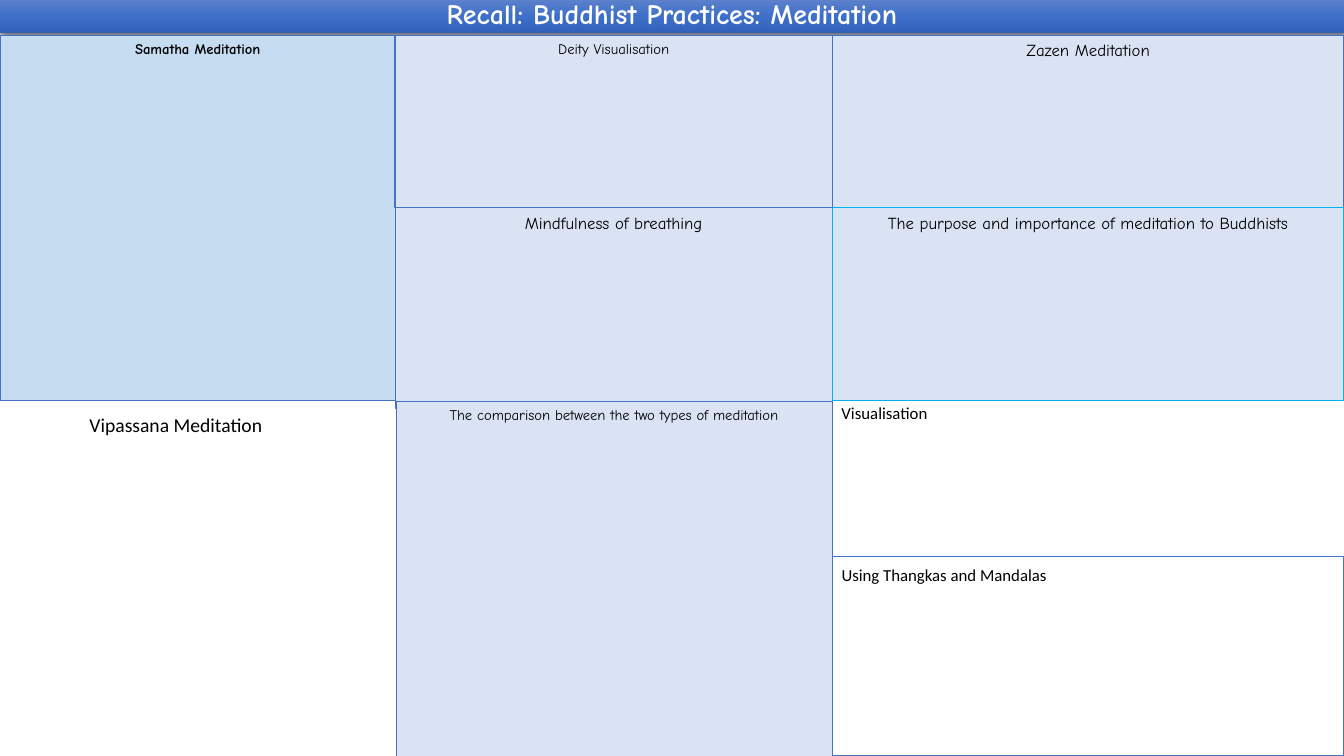
"""Build a recall sheet on Buddhist meditation practices."""
from copy import deepcopy
from lxml.etree import fromstring
from pptx import Presentation
from pptx.dml.color import RGBColor
from pptx.enum.shapes import MSO_SHAPE
from pptx.enum.text import MSO_ANCHOR, PP_ALIGN
from pptx.util import Pt

WHITE = RGBColor(0xFF, 0xFF, 0xFF)
BLACK = RGBColor(0, 0, 0)
BLUE = RGBColor(0x44, 0x72, 0xC4)
CYAN = RGBColor(0x00, 0xB0, 0xF0)
SKY = RGBColor(0xC6, 0xDC, 0xF0)
PALE = RGBColor(0xDA, 0xE3, 0xF3)
SHADES = [
    RGBColor(0x61, 0x83, 0xCB),
    RGBColor(0x3E, 0x70, 0xCA),
    RGBColor(0x30, 0x62, 0xBB),
]
HAND = "Comic Neue"
SHADOW = (
    '<a:effectLst xmlns:a="http://schemas.openxmlformats.org/drawingml/2006/main">'
    '<a:outerShdw blurRad="57150" dist="19050" dir="5400000" algn="ctr" rotWithShape="0">'
    '<a:srgbClr val="000000"><a:alpha val="63000"/></a:srgbClr>'
    "</a:outerShdw></a:effectLst>"
)

deck = Presentation()
deck.slide_width, deck.slide_height = Pt(960), Pt(540)
slide = deck.slides.add_slide(deck.slide_layouts[6])


def write(shape, text, size, face=HAND, color=BLACK, bold=False, align=PP_ALIGN.CENTER):
    frame = shape.text_frame
    frame.word_wrap = True
    para = frame.paragraphs[0]
    para.text = text
    para.alignment = align
    font = para.font
    font.name, font.size, font.bold = face, Pt(size), bold
    font.color.rgb = color
    return para


def add_box(left, top, width, height):
    return slide.shapes.add_shape(
        MSO_SHAPE.RECTANGLE, Pt(left), Pt(top), Pt(width), Pt(height)
    )


title = add_box(0, -1.3, 960, 25.2)
title.line.fill.background()
title.fill.gradient()
title.fill.gradient_angle = 270
first = title.element.spPr.xpath("a:gradFill/a:gsLst/a:gs")[0]
first.addnext(deepcopy(first))
for stop, shade, place in zip(title.fill.gradient_stops, SHADES, (0, 0.5, 1)):
    stop.color.rgb = shade
    stop.position = place
title.element.spPr.append(fromstring(SHADOW))
title.text_frame.vertical_anchor = MSO_ANCHOR.MIDDLE
head = write(title, "Recall: Buddhist Practices: Meditation", 20, color=WHITE, bold=True)
head.line_spacing = 0.9

panels = [
    ("Samatha Meditation", 0, 25.2, 282.6, 261, SKY, BLUE, 0.5, 10.5, True),
    ("Deity Visualisation", 282.3, 25.2, 312.2, 123, PALE, BLUE, 1, 10.5, False),
    ("Mindfulness of breathing", 282.3, 148.3, 312.2, 143.5, PALE, BLUE, 0.5, 12, False),
    ("", 594.3, 397.4, 365.7, 142.6, WHITE, BLUE, 0, 12, False),
    ("The comparison between the two types of meditation",
     283, 286.5, 311.3, 260, PALE, BLUE, 0.5, 10.5, False),
    ("Zazen Meditation", 594.5, 25.2, 365.5, 136, PALE, BLUE, 1, 12, False),
    ("The purpose and importance of meditation to Buddhists",
     594.5, 148.3, 365.5, 138, PALE, CYAN, 0.75, 12, False),
]
for text, left, top, width, height, fill, edge, weight, size, bold in panels:
    panel = add_box(left, top, width, height)
    panel.shadow.inherit = False
    panel.fill.solid()
    panel.fill.fore_color.rgb = fill
    panel.line.color.rgb = edge
    panel.line.width = Pt(weight)
    panel.text_frame.vertical_anchor = MSO_ANCHOR.TOP
    if text:
        write(panel, text, size, bold=bold)

labels = [
    ("Vipassana Meditation", 56.8, 291.6, 169, 24.2, 14),
    ("Using Thangkas and Mandalas", 594, 399.6, 207, 21.8, 12),
    ("Visualisation", 594, 284.4, 366, 21.8, 12),
]
for text, left, top, width, height, size in labels:
    label = slide.shapes.add_textbox(Pt(left), Pt(top), Pt(width), Pt(height))
    write(label, text, size, face="Calibri", align=PP_ALIGN.LEFT)

deck.save("out.pptx")
